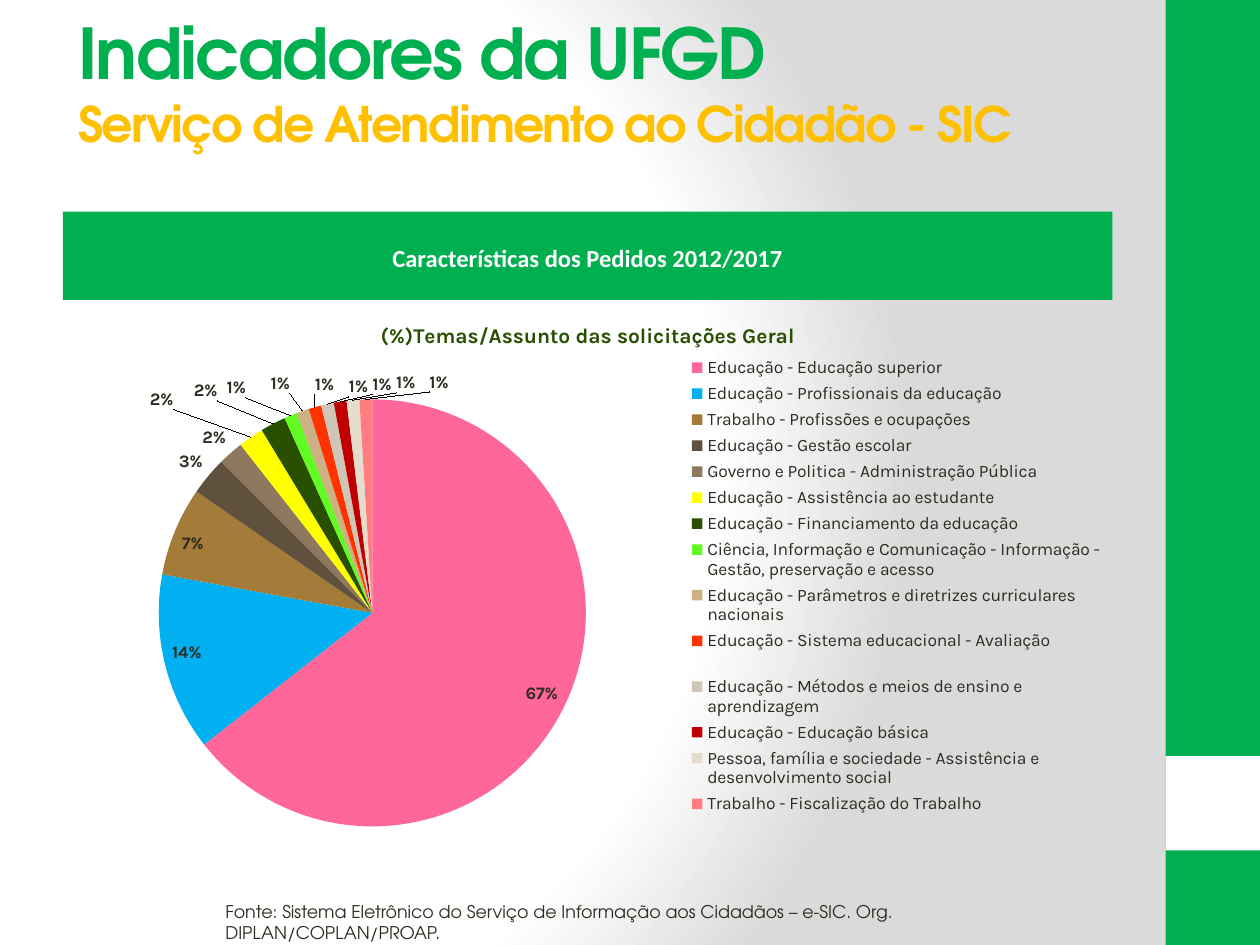
"""Build the citizen information service slide with its pie of request themes."""
from dataclasses import dataclass
from typing import Any

import lxml.etree
import pptx
import pptx.chart.data
import pptx.dml.color
import pptx.enum.chart
import pptx.enum.shapes
import pptx.enum.text
import pptx.oxml
import pptx.oxml.ns
import pptx.util

Inches = pptx.util.Inches
GREEN, INK = "00B050", "2F2B20"
HEAD_FONT, CHART_FONT = "TeX Gyre Adventor", "Karla"
CHART_WIDTH, CHART_HEIGHT = 8.33, 4.32
INSIDE = pptx.enum.chart.XL_LABEL_POSITION.INSIDE_END
OUTSIDE = pptx.enum.chart.XL_LABEL_POSITION.OUTSIDE_END


@dataclass
class Block:
    left: float
    top: float
    width: float
    height: float
    color: str


@dataclass
class Theme:
    name: str
    share: int
    color: str
    shift: float = 0
    lift: float = 0
    position: Any = OUTSIDE


SIDEBAR = [Block(9.25, 0, 0.75, 7.5, GREEN), Block(9.25, 6, 0.75, 0.75, "FFFFFF")]
BAND = Block(0.5, 1.68, 8.33, 0.7, GREEN)
THEMES = [
    Theme("Educação - Educação superior", 67, "FF6699", position=INSIDE),
    Theme("Educação - Profissionais da educação", 14, "00B0F0", position=INSIDE),
    Theme("Trabalho - Profissões e ocupações", 7, "A47B38", position=INSIDE),
    Theme("Educação - Gestão escolar", 3, "5F513E"),
    Theme("Governo e Politica - Administração Pública", 2, "8E795E"),
    Theme("Educação - Assistência ao estudante", 2, "FFFF00", -0.07, -0.04),
    Theme("Educação - Financiamento da educação", 2, "285000", -0.05, -0.03),
    Theme("Ciência, Informação e Comunicação - Informação - Gestão, preservação e acesso",
          1, "62FC24", -0.04, -0.02),
    Theme("Educação - Parâmetros e diretrizes curriculares nacionais",
          1, "CDB185", -0.01, -0.02),
    Theme("Educação - Sistema educacional - Avaliação\n", 1, "FF3300", 0.02, -0.01),
    Theme("Educação - Métodos e meios de ensino e aprendizagem", 1, "D0C6B8", 0.04),
    Theme("Educação - Educação básica", 1, "C00000", 0.05),
    Theme("Pessoa, família e sociedade - Assistência e desenvolvimento social",
          1, "E6DCCB", 0.06),
    Theme("Trabalho - Fiscalização do Trabalho", 1, "FF7C80", 0.07),
]


def rgb(color: str) -> pptx.dml.color.RGBColor:
    return pptx.dml.color.RGBColor.from_string(color)


def set_all(target: Any, **values: Any) -> None:
    for name, value in values.items():
        setattr(target, name, value)


def style(font: Any, name: str, size: float, color: str, bold: bool = False) -> None:
    set_all(font, name=name, size=pptx.util.Pt(size), bold=bold)
    font.color.rgb = rgb(color)


def element(xml: str) -> Any:
    head, mark, tail = xml.partition(">")
    if head.endswith("/"):
        head, mark = head[:-1], "/>"
    return pptx.oxml.parse_xml(head + " " + pptx.oxml.ns.nsdecls("a", "c") + mark + tail)


def manual_layout(**values: Any) -> Any:
    parts = "".join(f'<c:{name} val="{value}"/>' for name, value in values.items())
    return element(f"<c:layout><c:manualLayout>{parts}</c:manualLayout></c:layout>")


def chart_area(left: float, top: float, width: float, height: float, **extra: str) -> Any:
    return manual_layout(**extra, xMode="edge", yMode="edge",
                         x=left / CHART_WIDTH, y=top / CHART_HEIGHT,
                         w=width / CHART_WIDTH, h=height / CHART_HEIGHT)


def paint_background(page: Any) -> None:
    fill = page.background.fill
    fill.gradient()
    gradient = page.background._cSld.find(".//" + pptx.oxml.ns.qn("a:gradFill"))
    stops = "".join(f'<a:gs pos="{pos}000"><a:srgbClr val="{color}"/></a:gs>'
                    for pos, color in [(0, "FFFFFF"), (75, "FFFFFF"), (100, "DADADA")])
    gradient.getparent().replace(gradient, element(
        f'<a:gradFill rotWithShape="1"><a:gsLst>{stops}</a:gsLst><a:path path="circle">'
        '<a:fillToRect l="20000" t="50000" r="100000" b="50000"/></a:path></a:gradFill>'))


def add_block(page: Any, block: Block) -> Any:
    box = page.shapes.add_shape(
        pptx.enum.shapes.MSO_SHAPE.RECTANGLE, Inches(block.left), Inches(block.top),
        Inches(block.width), Inches(block.height))
    box.shadow.inherit = False
    box.fill.solid()
    box.fill.fore_color.rgb = rgb(block.color)
    box.line.fill.background()
    return box


def add_span(para: Any, text: str, *look: Any) -> Any:
    span = para.add_run()
    span.text = text
    style(span.font, *look)
    return span


def fill_title(title: Any) -> None:
    set_all(title, left=Inches(0.52), top=Inches(0.18), width=Inches(8.33), height=Inches(0.93))
    set_all(title.text_frame, word_wrap=True, auto_size=pptx.enum.text.MSO_AUTO_SIZE.NONE,
            vertical_anchor=pptx.enum.text.MSO_ANCHOR.MIDDLE)
    para = title.text_frame.paragraphs[0]
    para.alignment = pptx.enum.text.PP_ALIGN.LEFT
    spans = [add_span(para, "Indicadores da UFGD", HEAD_FONT, 40, GREEN, True)]
    para.add_line_break()
    spans.append(add_span(para, "Serviço de Atendimento ao Cidadão - SIC",
                          HEAD_FONT, 28, "FFC000", True))
    for span in spans:
        span.font._element.set("spc", "-100")


def label_point(point: Any, theme: Theme) -> None:
    label = point.data_label
    style(label.font, CHART_FONT, 10, INK, True)
    label.position = theme.position
    label._dLbl.insert(1, element(
        '<c:numFmt formatCode="0&quot;%&quot;" sourceLinked="0"/>'))
    if theme.shift:
        label._dLbl.insert(1, manual_layout(x=theme.shift, y=theme.lift))


def add_pie(page: Any) -> None:
    data = pptx.chart.data.CategoryChartData()
    data.categories = [theme.name for theme in THEMES]
    data.add_series("Series 1", [theme.share for theme in THEMES])
    chart = page.shapes.add_chart(
        pptx.enum.chart.XL_CHART_TYPE.PIE, Inches(0.5), Inches(2.38),
        Inches(CHART_WIDTH), Inches(CHART_HEIGHT), data).chart
    style(chart.font, "Calibri", 10, INK)
    add_span(chart.chart_title.text_frame.paragraphs[0],
             "(%)Temas/Assunto das solicitações Geral", CHART_FONT, 12, "285000", True)
    chart.has_legend = True
    set_all(chart.legend, position=pptx.enum.chart.XL_LEGEND_POSITION.RIGHT,
            include_in_layout=False)
    style(chart.legend.font, CHART_FONT, 10, INK)
    chart.legend._element.find(pptx.oxml.ns.qn("c:legendPos")).addnext(
        chart_area(4.9, 0.41, 3.42, 3.72))
    area = chart._chartSpace.chart.plotArea
    for old in area.findall(pptx.oxml.ns.qn("c:layout")):
        area.remove(old)
    area.insert(0, chart_area(0.76, 0.79, 3.39, 3.39, layoutTarget="inner"))
    plot = chart.plots[0]
    plot.vary_by_categories = True
    series = plot.series[0]
    set_all(series.data_labels, show_value=True, number_format='0"%"',
            number_format_is_linked=False)
    for index, theme in enumerate(THEMES):
        point = series.points[index]
        point.format.fill.solid()
        point.format.fill.fore_color.rgb = rgb(theme.color)
        label_point(point, theme)


def main() -> None:
    deck = pptx.Presentation()
    set_all(deck, slide_width=Inches(10), slide_height=Inches(7.5))
    page = deck.slides.add_slide(deck.slide_layouts[5])
    paint_background(page)
    for block in SIDEBAR:
        add_block(page, block)
    fill_title(page.shapes.title)
    band = add_block(page, BAND)
    band.text_frame.margin_top = Inches(0.08)
    para = band.text_frame.paragraphs[0]
    para.alignment = pptx.enum.text.PP_ALIGN.CENTER
    add_span(para, "Características dos Pedidos 2012/2017", "Calibri", 14, "FFFFFF", True)
    source = page.shapes.add_textbox(Inches(1.69), Inches(7.1), Inches(6.3), Inches(0.44))
    source.text_frame.word_wrap = True
    add_span(source.text_frame.paragraphs[0],
             "Fonte: Sistema Eletrônico do Serviço de Informação aos Cidadãos – e-SIC. "
             "Org. DIPLAN/COPLAN/PROAP.", HEAD_FONT, 10, INK)
    add_pie(page)
    deck.save("out.pptx")


if __name__ == "__main__":
    main()
